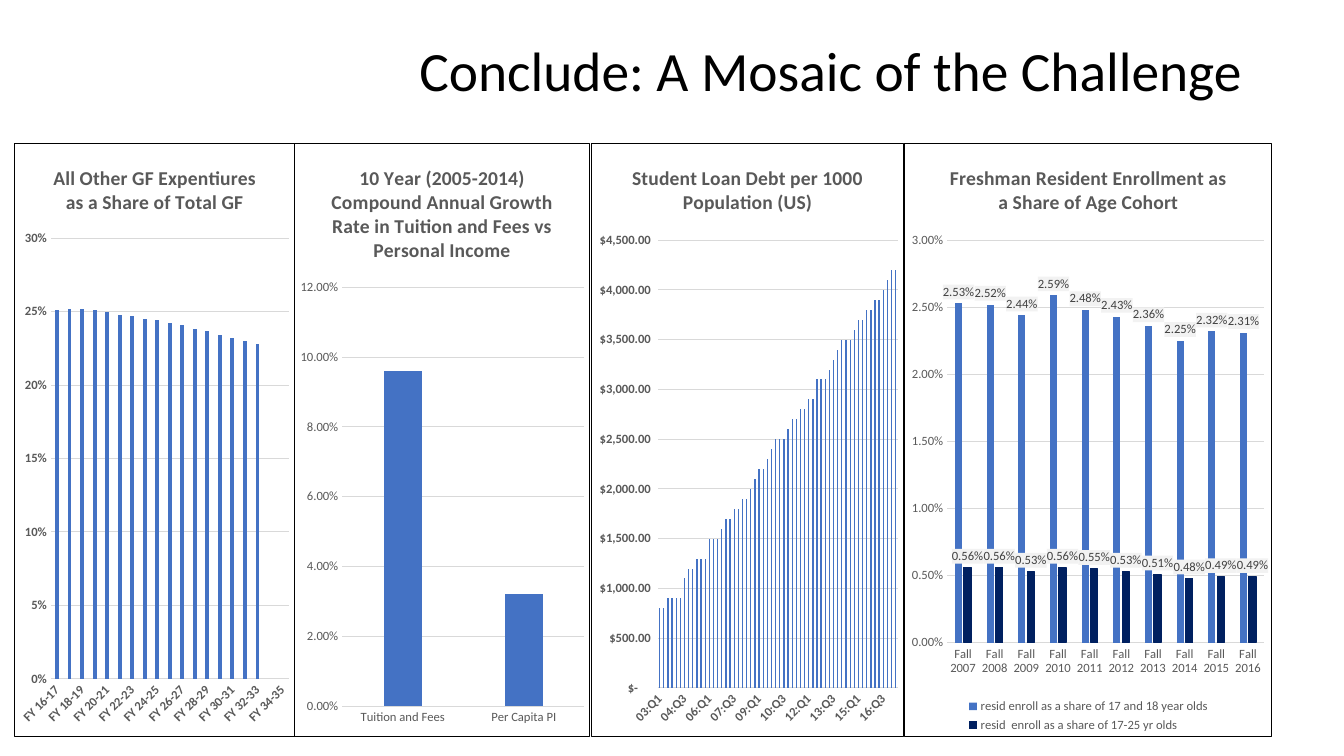
from dataclasses import dataclass

from lxml import etree
from pptx import Presentation
from pptx.chart.data import CategoryChartData
from pptx.dml.color import RGBColor
from pptx.enum.chart import XL_CHART_TYPE as ChartType
from pptx.enum.chart import XL_LABEL_POSITION as LabelPosition
from pptx.enum.chart import XL_LEGEND_POSITION as LegendPosition
from pptx.enum.chart import XL_TICK_MARK as TickMark
from pptx.enum.text import MSO_ANCHOR as Anchor
from pptx.enum.text import MSO_AUTO_SIZE as AutoSize
from pptx.enum.text import PP_ALIGN as Align
from pptx.oxml import parse_xml
from pptx.oxml.ns import nsdecls, qn
from pptx.util import Inches, Pt

FONT = "Calibri"
COLORS = {
    "black": "000000",
    "text": "595959",
    "label": "404040",
    "label_fill": "F2F2F2",
    "grid": "D9D9D9",
    "blue": "4472C4",
    "navy": "002060",
}
PANEL_TOP, PANEL_HEIGHT = 1.42, 5.89
DOLLARS = '_("$"* #,##0.00_);_("$"* \\(#,##0.00\\);_("$"* "-"??_);_(@_)'


@dataclass
class Panel:
    title: str
    left: float
    width: float
    plot: tuple  # left, top, width, height on the slide, in inches
    categories: list
    series: dict
    number_format: str
    maximum: float
    step: float
    bold: bool = False
    label_skip: int = 1
    detailed: bool = False  # value labels and legend


def color(name):
    return RGBColor.from_string(COLORS[name])


def set_font(font, size, name, bold=False):
    font.name, font.size, font.bold = FONT, Pt(size), bold
    font.color.rgb = color(name)


def set_line(line, name):
    line.color.rgb = color(name)
    line.width = Pt(0.75)


def add_title(slide, text):
    title = slide.shapes.title
    title.left, title.top = Inches(0.92), Inches(0.4)
    title.width, title.height = Inches(11.5), Inches(0.66)
    frame = title.text_frame
    frame.text = text
    frame.auto_size = AutoSize.NONE
    frame.vertical_anchor = Anchor.MIDDLE
    paragraph = frame.paragraphs[0]
    paragraph.alignment, paragraph.line_spacing = Align.RIGHT, 0.9
    set_font(paragraph.font, 39.6, "black")


def place_plot(chart, panel):
    left, top, width, height = panel.plot
    fractions = {
        "x": (left - panel.left) / panel.width,
        "y": (top - PANEL_TOP) / PANEL_HEIGHT,
        "w": width / panel.width,
        "h": height / PANEL_HEIGHT,
    }
    plot_area = chart.element.find(".//" + qn("c:plotArea"))
    for layout in plot_area.findall(qn("c:layout")):
        plot_area.remove(layout)
    settings = '<c:layoutTarget val="inner"/><c:xMode val="edge"/><c:yMode val="edge"/>'
    settings += "".join(f'<c:{key} val="{value:.4f}"/>' for key, value in fractions.items())
    plot_area.insert(0, parse_xml(
        f'<c:layout {nsdecls("c")}><c:manualLayout>{settings}</c:manualLayout></c:layout>'))


def add_border(chart):
    border = parse_xml(
        f'<c:spPr {nsdecls("c", "a")}><a:noFill/><a:ln w="{Pt(0.75)}"><a:solidFill>'
        f'<a:srgbClr val="{COLORS["black"]}"/></a:solidFill></a:ln></c:spPr>')
    chart.element.find(qn("c:chart")).addnext(border)


def format_axes(chart, panel):
    for axis in (chart.category_axis, chart.value_axis):
        axis.major_tick_mark = axis.minor_tick_mark = TickMark.NONE
        set_font(axis.tick_labels.font, 9, "text", panel.bold)
    categories, values = chart.category_axis, chart.value_axis
    set_line(categories.format.line, "grid")
    values.format.line.fill.background()
    set_line(values.major_gridlines.format.line, "grid")
    values.minimum_scale, values.maximum_scale = 0, panel.maximum
    values.major_unit = panel.step
    values.tick_labels.number_format = panel.number_format
    values.tick_labels.number_format_is_linked = False

    # Slanted category labels, with some left out
    if panel.label_skip > 1:
        axis_element = chart.element.find(".//" + qn("c:catAx"))
        axis_element.find(qn("c:txPr")).find(qn("a:bodyPr")).set("rot", "-2700000")
        skip = etree.Element(qn("c:tickLblSkip"), val=str(panel.label_skip))
        axis_element.find(qn("c:noMultiLvlLbl")).addprevious(skip)


def add_value_labels(series):
    labels = series.data_labels
    labels.show_value = True
    labels.number_format, labels.number_format_is_linked = "0.00%", False
    labels.position = LabelPosition.OUTSIDE_END
    set_font(labels.font, 9, "label")
    fill = parse_xml(
        f'<c:spPr {nsdecls("c", "a")}><a:solidFill><a:srgbClr val="{COLORS["label_fill"]}"/>'
        "</a:solidFill></c:spPr>")
    series.format.fill.solid()
    series._element.find(qn("c:dLbls")).find(qn("c:txPr")).addprevious(fill)


def add_panel(slide, panel):
    data = CategoryChartData()
    data.categories = panel.categories
    for name, values in panel.series.items():
        data.add_series(name, values)
    chart = slide.shapes.add_chart(
        ChartType.COLUMN_CLUSTERED, Inches(panel.left), Inches(PANEL_TOP),
        Inches(panel.width), Inches(PANEL_HEIGHT), data).chart
    set_font(chart.font, 10, "black")
    add_border(chart)

    chart.has_title = True
    chart.chart_title.include_in_layout = False
    chart.chart_title.text_frame.text = panel.title
    set_font(chart.chart_title.text_frame.paragraphs[0].font, 14, "text", True)
    place_plot(chart, panel)
    format_axes(chart, panel)

    # Columns
    plot = chart.plots[0]
    plot.gap_width, plot.overlap, plot.vary_by_categories = 219, -27, False
    for series, name in zip(plot.series, ("blue", "navy")):
        if panel.detailed:
            add_value_labels(series)
        series.format.fill.solid()
        series.format.fill.fore_color.rgb = color(name)
        series.invert_if_negative = False
        if name == "navy":
            set_line(series.format.line, name)

    chart.has_legend = panel.detailed
    if panel.detailed:
        chart.legend.position = LegendPosition.BOTTOM
        chart.legend.include_in_layout = False
        set_font(chart.legend.font, 9, "text")


def build_panels():
    quarters = [f"{year:02}:Q{quarter}" for year in range(3, 18) for quarter in range(1, 5)][:58]
    debt_hundreds = [
        8, 8, 9, 9, 9, 9, 11, 12, 12, 13, 13, 13, 15, 15, 15, 16, 17, 17, 18, 18,
        19, 19, 20, 21, 22, 22, 23, 24, 25, 25, 25, 26, 27, 27, 28, 28, 29, 29, 31, 31,
        31, 32, 33, 34, 35, 35, 35, 36, 37, 37, 38, 38, 39, 39, 40, 41, 42, 42]
    return [
        Panel("10 Year (2005-2014) Compound Annual Growth Rate in Tuition and Fees "
              "vs Personal Income", 2.92, 2.93, (3.39, 2.85, 2.41, 4.16),
              ["Tuition and Fees", "Per Capita PI"], {"Series 1": [0.096, 0.032]},
              "0.00%", 0.12, 0.02),
        Panel("Student Loan Debt per 1000 Population (US)", 5.86, 3.11,
              (6.52, 2.38, 2.39, 4.45), quarters,
              {"Series 1": [value * 100 for value in debt_hundreds]},
              DOLLARS, 4500, 500, bold=True, label_skip=6),
        Panel("All Other GF Expentiures as a Share of Total GF", 0.14, 2.79,
              (0.5, 2.36, 2.37, 4.38),
              [f"FY {year}-{year + 1}" for year in range(16, 35)],
              {"Series 1": [0.251, 0.252, 0.252, 0.251, 0.25, 0.248, 0.247, 0.245, 0.244,
                            0.242, 0.241, 0.238, 0.237, 0.234, 0.232, 0.23, 0.228,
                            None, None]},
              "0%", 0.3, 0.05, bold=True, label_skip=2),
        Panel("Freshman Resident Enrollment as a Share of Age Cohort", 8.97, 3.65,
              (9.39, 2.38, 3.15, 4.0), [f"Fall {year}" for year in range(2007, 2017)],
              {"resid enroll as a share of 17 and 18 year olds":
                  [0.0253, 0.0252, 0.0244, 0.0259, 0.0248,
                   0.0243, 0.0236, 0.0225, 0.0232, 0.0231],
               "resid  enroll as a share of 17-25 yr olds":
                  [0.0056, 0.0056, 0.0053, 0.0056, 0.0055,
                   0.0053, 0.0051, 0.0048, 0.0049, 0.0049]},
              "0.00%", 0.03, 0.005, detailed=True),
    ]


def main():
    presentation = Presentation()
    presentation.slide_width, presentation.slide_height = Inches(13.33), Inches(7.5)
    slide = presentation.slides.add_slide(presentation.slide_layouts[5])
    add_title(slide, "Conclude: A Mosaic of the Challenge")
    for panel in build_panels():
        add_panel(slide, panel)
    presentation.save("out.pptx")


if __name__ == "__main__":
    main()
